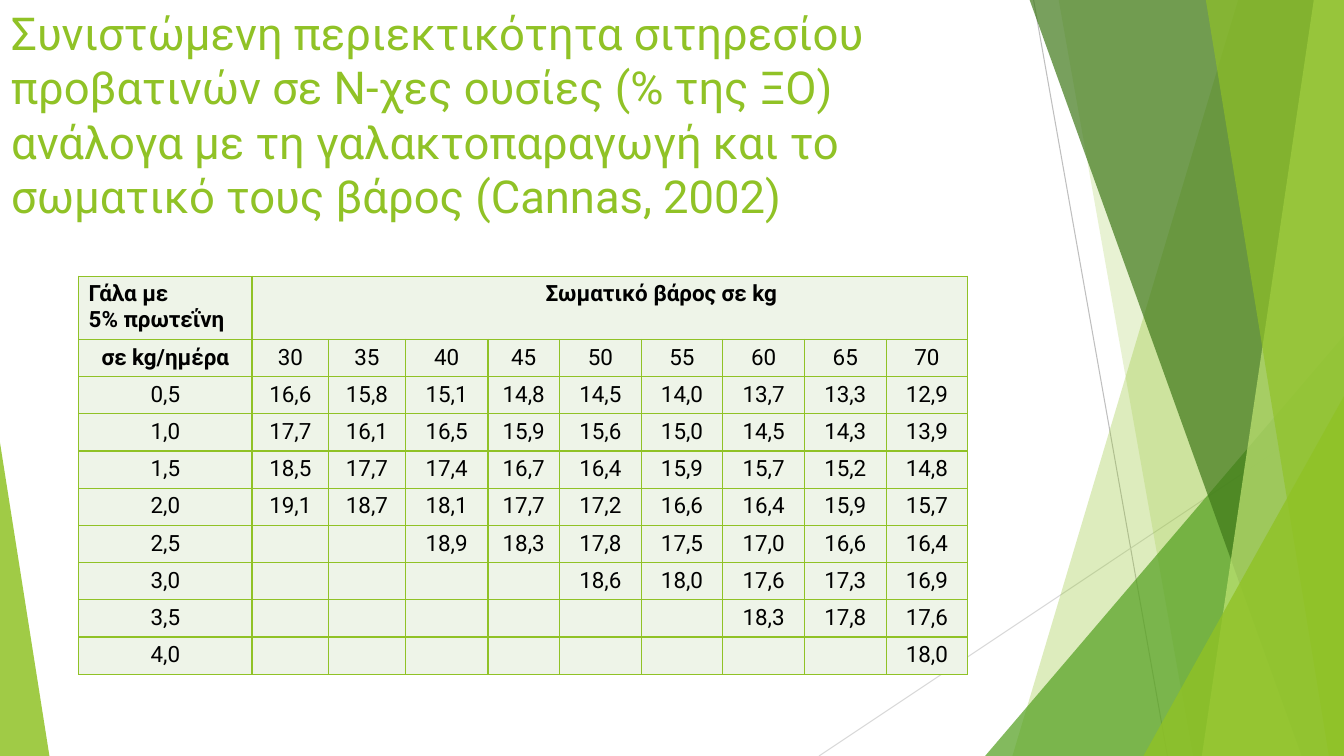
import lxml.etree
import pptx
import pptx.dml.color
import pptx.enum.shapes
import pptx.enum.text
import pptx.oxml.ns
import pptx.util

W, H = pptx.util.Inches(13.33), pptx.util.Inches(7.5)
FONT, GREEN, PALE = "Roboto", "90C226", "EEF4E8"
LEFT, CENTER = pptx.enum.text.PP_ALIGN.LEFT, pptx.enum.text.PP_ALIGN.CENTER
TRIANGLE = pptx.enum.shapes.MSO_SHAPE.ISOSCELES_TRIANGLE
qn = pptx.oxml.ns.qn

TITLE = ("Συνιστώμενη περιεκτικότητα σιτηρεσίου προβατινών σε Ν-χες ουσίες "
         "(% της ΞΟ) ανάλογα με τη γαλακτοπαραγωγή και το σωματικό τους βάρος "
         "(Cannas, 2002)")
MILK_HEAD = ["Γάλα με", "5% πρωτεΐνη"]
MILK_UNIT = "σε kg/ημέρα"
WEIGHT_HEAD = "Σωματικό βάρος σε kg"
WEIGHTS = "30 35 40 45 50 55 60 65 70".split()
PROTEIN = {
    "0,5": "16,6 15,8 15,1 14,8 14,5 14,0 13,7 13,3 12,9",
    "1,0": "17,7 16,1 16,5 15,9 15,6 15,0 14,5 14,3 13,9",
    "1,5": "18,5 17,7 17,4 16,7 16,4 15,9 15,7 15,2 14,8",
    "2,0": "19,1 18,7 18,1 17,7 17,2 16,6 16,4 15,9 15,7",
    "2,5": "18,9 18,3 17,8 17,5 17,0 16,6 16,4",
    "3,0": "18,6 18,0 17,6 17,3 16,9",
    "3,5": "18,3 17,8 17,6",
    "4,0": "18,0",
}
COLS = [1.72, 0.76, 0.76, 0.82, 0.71] + [0.81] * 5
ROWS = [0.63] + [0.37] * 9


def rgb(value):
    return pptx.dml.color.RGBColor.from_string(value)


def area(x, y, w, h):
    return int(W * x / 100), int(H * y / 100), int(W * w / 100), int(H * h / 100)


def point(box, x, y):
    return int(box[0] + box[2] * x / 100), int(box[1] + box[3] * y / 100)


def write(p, text, size=16, color="000000", bold=False, align=CENTER):
    r = p.add_run()
    r.text = text
    r.font.name, r.font.size, r.font.bold = FONT, pptx.util.Pt(size), bold
    r.font.color.rgb = rgb(color)
    p.alignment = align


def paint(sp, color, opacity):
    sp.shadow.inherit = False
    sp.line.fill.background()
    sp.fill.solid()
    sp.fill.fore_color.rgb = rgb(color)
    tint = sp.element.spPr.find(qn("a:solidFill"))[0]
    lxml.etree.SubElement(tint, qn("a:alpha"), val=str(opacity * 1000))


def add_line(s, start, end, color):
    line = s.shapes.add_connector(pptx.enum.shapes.MSO_CONNECTOR.STRAIGHT, *start, *end)
    line.line.color.rgb = rgb(color)
    line.line.width = pptx.util.Pt(0.75)
    lxml.etree.SubElement(line.element.spPr, qn("a:effectLst"))


def add_facet(s, box, top, bottom, color, opacity):
    corners = [point(box, x, y) for x, y in ((top, 0), (100, 0), (100, 100), (bottom, 100))]
    fb = s.shapes.build_freeform(*corners[0])
    fb.add_line_segments(corners[1:], close=True)
    paint(fb.convert_to_shape(), color, opacity)


def add_wedge(s, box, x, y, apex, color, opacity):
    left, top = point(box, x, y)
    right, bottom = point(box, 100, 100)
    sp = s.shapes.add_shape(TRIANGLE, left, top, right - left, bottom - top)
    sp.adjustments[0] = apex
    paint(sp, color, opacity)


def add_decoration(s, box, edge):
    add_line(s, point(box, 13.5, 0), point(box, 50.8, 100), "BFBFBF")
    add_line(s, point(box, 100, 53.7), point(box, -46.3, 100), "D9D9D9")
    add_facet(s, box, 70.5, 7.6, GREEN, 30)
    add_facet(s, box, 20.5, 57.9, GREEN, 20)
    add_wedge(s, box, 0, 44.4, 1, "54A021", 72)
    add_facet(s, box, 12.4, 88.2, "3F7819", 70)
    add_facet(s, box, 91.6, 60.4, "C0E474", 70)
    add_facet(s, box, 61.5, 95.8, GREEN, 65)
    add_wedge(s, box, 44.1, 52.4, 1, GREEN, 80)
    add_wedge(s, edge, 0, 0, 0, GREEN, 85)


def add_title(s, box):
    sp = s.shapes.title
    s.shapes.element.append(sp.element)
    sp.left, sp.top, sp.width, sp.height = box
    tf = sp.text_frame
    tf.word_wrap = True
    tf.auto_size = pptx.enum.text.MSO_AUTO_SIZE.NONE
    tf.vertical_anchor = pptx.enum.text.MSO_ANCHOR.TOP
    write(tf.paragraphs[0], TITLE, size=32.4, color=GREEN, align=LEFT)


def style_cell(cell):
    tcPr = cell._tc.get_or_add_tcPr()
    for side in ("lnL", "lnR", "lnT", "lnB"):
        ln = lxml.etree.SubElement(tcPr, qn("a:" + side), w=str(pptx.util.Pt(1)))
        fill = lxml.etree.SubElement(ln, qn("a:solidFill"))
        lxml.etree.SubElement(fill, qn("a:srgbClr"), val=GREEN)
    cell.fill.solid()
    cell.fill.fore_color.rgb = rgb(PALE)
    if not cell.text_frame.text:
        cell.margin_top = cell.margin_bottom = 0


def add_protein_table(s, box):
    table = s.shapes.add_table(len(ROWS), len(COLS), *box).table
    table.first_row = table.horz_banding = False
    for col, share in zip(table.columns, COLS):
        col.width = int(box[2] * share / sum(COLS))
    for row, share in zip(table.rows, ROWS):
        row.height = int(box[3] * share / sum(ROWS))

    milk, weight = table.cell(0, 0), table.cell(0, 1)
    weight.merge(table.cell(0, len(COLS) - 1))
    write(milk.text_frame.paragraphs[0], MILK_HEAD[0], bold=True, align=LEFT)
    write(milk.text_frame.add_paragraph(), MILK_HEAD[1], bold=True, align=LEFT)
    write(weight.text_frame.paragraphs[0], WEIGHT_HEAD, bold=True, align=LEFT)
    weight.margin_left = int(box[2] * 0.33)

    lines = [[MILK_UNIT] + WEIGHTS]
    for amount, values in PROTEIN.items():
        values = values.split()
        lines.append([amount] + [""] * (len(WEIGHTS) - len(values)) + values)
    for i, line in enumerate(lines, 1):
        for j, text in enumerate(line):
            if text:
                write(table.cell(i, j).text_frame.paragraphs[0], text, bold=text == MILK_UNIT)
    for cell in table.iter_cells():
        style_cell(cell)


def main():
    prs = pptx.Presentation()
    prs.slide_width, prs.slide_height = W, H
    s = prs.slides.add_slide(prs.slide_layouts[5])
    add_decoration(s, area(73.3, 0, 26.7, 100), area(0, 58.53, 3.68, 41.47))
    add_title(s, area(0.08, 0, 70.5, 19.2))
    add_protein_table(s, area(5.85, 36.53, 66.17, 52.67))
    prs.save("out.pptx")


if __name__ == "__main__":
    main()
